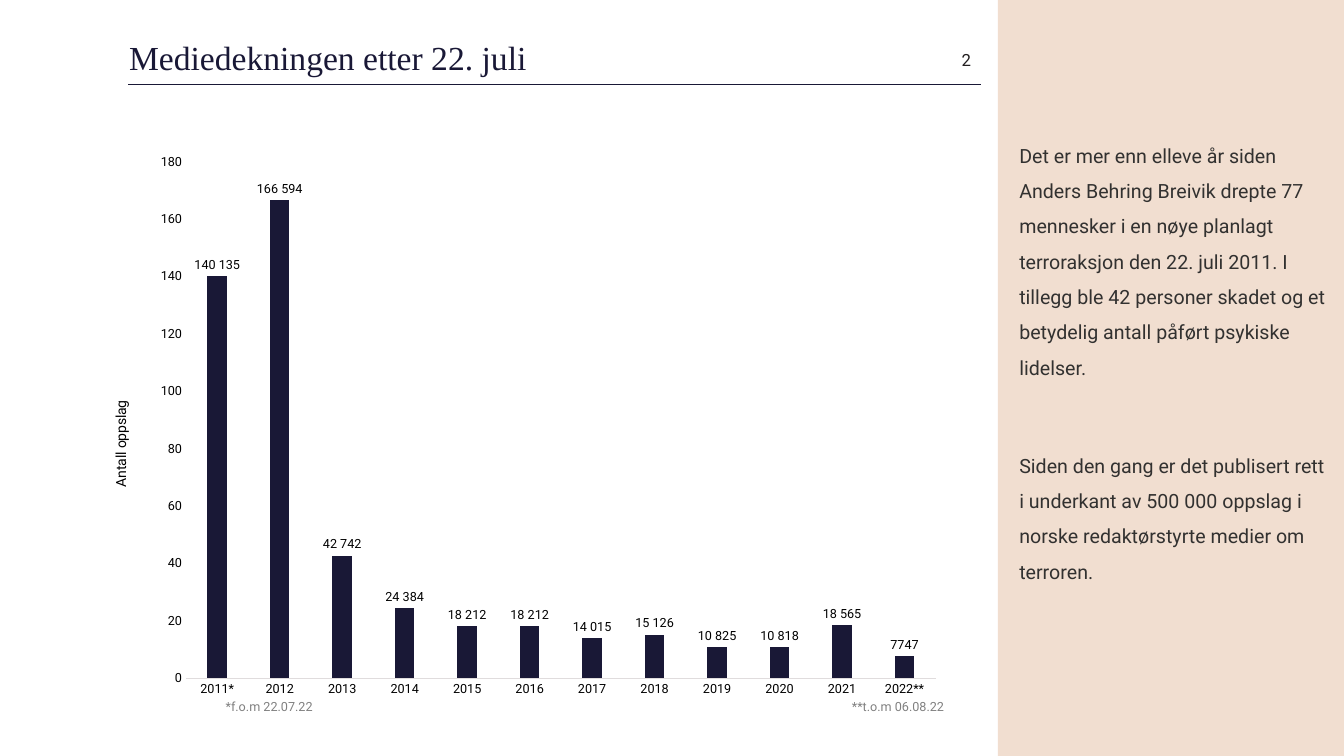
"""Build the slide on media coverage after 22 July."""
from lxml import etree
from pptx import Presentation, util as u
from pptx.chart import data as cd
from pptx.dml.color import RGBColor
from pptx.enum import chart as ch, shapes, text
from pptx.oxml.ns import qn

COLORS = {"navy": "191836", "sand": "F1DED0", "body": "323130", "number": "231F20",
          "note": "808080", "black": "000000", "axis": "E0DCDD"}
COVERAGE = [
    ("2011*", 140.135, "140 135"), ("2012", 166.594, "166 594"),
    ("2013", 42.724, "42 742"), ("2014", 24.382, "24 384"),
    ("2015", 18.212, "18 212"), ("2016", 18.212, "18 212"),
    ("2017", 14.015, "14 015"), ("2018", 15.126, "15 126"),
    ("2019", 10.825, "10 825"), ("2020", 10.818, "10 818"),
    ("2021", 18.565, "18 565"), ("2022**", 7.747, "7747"),
]
BODY = [
    "Det er mer enn elleve år siden Anders Behring Breivik drepte 77 mennesker i en "
    "nøye planlagt terroraksjon den 22. juli 2011. I tillegg ble 42 personer skadet "
    "og et betydelig antall påført psykiske lidelser.",
    "Siden den gang er det publisert rett i underkant av 500 000 oppslag i norske "
    "redaktørstyrte medier om terroren.",
]


def rgb(name):
    return RGBColor.from_string(COLORS[name])


def style(font, size, color, name="Roboto"):
    font.size, font.name, font.bold = u.Pt(size), name, False
    font.color.rgb = rgb(color)


def write(tf, *lines, size=9, color="black", font="Roboto", align="LEFT",
          spacing=None, gap=0, bullets=True):
    for i, line in enumerate(lines):
        p = tf.add_paragraph() if i else tf.paragraphs[0]
        p.alignment = getattr(text.PP_ALIGN, align)
        p.line_spacing = spacing
        p.space_before = u.Pt(gap if i else 0)
        if not bullets:
            pPr = p._p.get_or_add_pPr()
            pPr.set("marL", "0")
            pPr.set("indent", "0")
            etree.SubElement(pPr, qn("a:buNone"))
        r = p.add_run()
        r.text = line
        style(r.font, size, color, font)


def place(parent, index, **shares):
    for old in parent.findall(qn("c:layout")):
        parent.remove(old)
    layout = etree.Element(qn("c:layout"))
    manual = etree.SubElement(layout, qn("c:manualLayout"))
    if "w" in shares:
        etree.SubElement(manual, qn("c:layoutTarget"), val="inner")
    for key in "xy":
        etree.SubElement(manual, qn(f"c:{key}Mode"), val="edge")
    for key, share in shares.items():
        etree.SubElement(manual, qn(f"c:{key}"), val=str(share))
    parent.insert(index, layout)


class Deck:
    """Hold the current slide and place elements by percent of its size."""

    def __init__(self):
        self.prs = Presentation()
        self.prs.slide_width, self.prs.slide_height = u.Inches(13.33), u.Inches(7.5)
        self.s = self.prs.slides.add_slide(self.prs.slide_layouts[1])

    def at(self, *shares):
        sizes = (self.prs.slide_width, self.prs.slide_height) * 2
        return [int(size * share / 100) for size, share in zip(sizes, shares)]

    def panel(self, area, color):
        sp = self.s.shapes.add_shape(shapes.MSO_SHAPE.RECTANGLE, *self.at(*area))
        sp.shadow.inherit = False
        sp.fill.solid()
        sp.fill.fore_color.rgb = rgb(color)
        sp.line.fill.background()
        sp.element.getparent().insert(2, sp.element)

    def placeholder(self, idx, area, *lines, anchor="TOP", **fmt):
        sp = self.s.placeholders[idx]
        sp.left, sp.top, sp.width, sp.height = self.at(*area)
        tf = sp.text_frame
        tf.word_wrap, tf.auto_size = True, text.MSO_AUTO_SIZE.NONE
        tf.margin_left = tf.margin_right = tf.margin_top = tf.margin_bottom = 0
        tf.vertical_anchor = getattr(text.MSO_ANCHOR, anchor)
        write(tf, *lines, **fmt)

    def label(self, area, line, anchor="TOP", **fmt):
        tf = self.s.shapes.add_textbox(*self.at(*area)).text_frame
        tf.word_wrap = True
        tf.vertical_anchor = getattr(text.MSO_ANCHOR, anchor)
        write(tf, line, **fmt)

    def rule(self, ends, color):
        line = self.s.shapes.add_connector(shapes.MSO_CONNECTOR.STRAIGHT, *self.at(*ends))
        line.line.color.rgb, line.line.width = rgb(color), u.Pt(0.75)
        etree.SubElement(line.element.spPr, qn("a:effectLst"))

    def columns(self, area, rows, axis_title):
        cats, vals, names = zip(*rows)
        data = cd.CategoryChartData()
        data.categories = cats
        data.add_series("Series 1", vals)
        chart = self.s.shapes.add_chart(
            ch.XL_CHART_TYPE.COLUMN_CLUSTERED, *self.at(*area), data).chart
        chart.has_legend = chart.has_title = False
        style(chart.font, 10, "black")
        plot = chart.plots[0]
        plot.gap_width, plot.overlap, plot.vary_by_categories = 219, -27, False
        series = plot.series[0]
        series.format.fill.solid()
        series.format.fill.fore_color.rgb = rgb("navy")
        labels = series.data_labels
        labels.show_value, labels.position = True, ch.XL_LABEL_POSITION.OUTSIDE_END
        style(labels.font, 9, "black")
        for i, name in enumerate(names):
            label = series.points[i].data_label
            write(label.text_frame, name, align="CENTER")
            label.position = ch.XL_LABEL_POSITION.OUTSIDE_END
        for axis in (chart.category_axis, chart.value_axis):
            axis.major_tick_mark = axis.minor_tick_mark = ch.XL_TICK_MARK.NONE
            axis.has_major_gridlines = False
            style(axis.tick_labels.font, 9, "black")
        line = chart.category_axis.format.line
        line.color.rgb, line.width = rgb("axis"), u.Pt(0.75)
        axis = chart.value_axis
        axis.format.line.fill.background()
        axis.minimum_scale, axis.maximum_scale, axis.major_unit = 0, 180, 20
        write(axis.axis_title.text_frame, axis_title, size=10, align="CENTER")
        place(axis.axis_title.element, 1, x=0.01, y=0.45)
        place(chart.element.chart.plotArea, 0, x=0.1, y=0.03, w=0.88, h=0.92)


def main():
    deck = Deck()
    deck.panel((74.25, 0, 25.75, 100), "sand")
    deck.placeholder(0, (9.6, 5.07, 63.4, 5.6), "Mediedekningen etter 22. juli",
                     anchor="MIDDLE", size=24, color="navy",
                     font="Times New Roman", spacing=0.9)
    deck.label((64.67, 5.07, 8.33, 5.6), "2", anchor="MIDDLE", size=12,
               color="number", align="RIGHT")
    deck.placeholder(1, (75.84, 17.47, 23.1, 61.07), *BODY, size=14, color="body",
                     spacing=1.5, gap=45, bullets=False)
    deck.columns((7.5, 19.2, 63.4, 74.27), COVERAGE, "Antall oppslag")
    deck.label((16.05, 91.73, 19.43, 3.33), "*f.o.m 22.07.22", color="note")
    deck.label((51.54, 91.73, 19.43, 3.33), "**t.o.m 06.08.22", color="note",
               align="RIGHT")
    deck.rule((9.53, 11.2, 73, 11.2), "navy")
    deck.prs.save("out.pptx")


if __name__ == "__main__":
    main()
